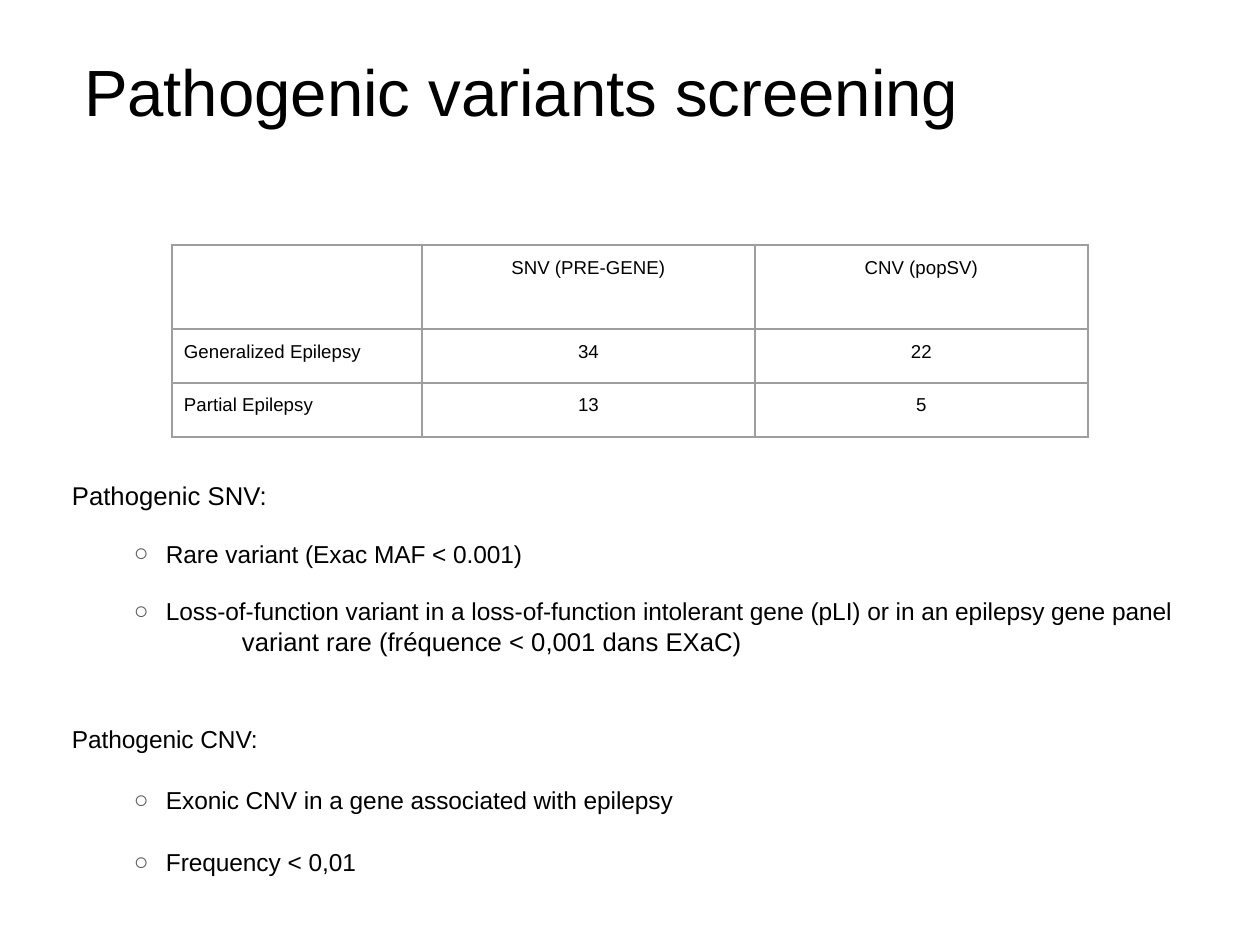
from dataclasses import dataclass
from lxml.etree import SubElement
from pptx import Presentation
from pptx.dml.color import RGBColor
from pptx.enum.text import MSO_ANCHOR, MSO_AUTO_SIZE, PP_ALIGN
from pptx.oxml.ns import qn
from pptx.util import Emu, Pt


@dataclass(frozen=True)
class Theme:
    """Colours, font and type sizes of the slide."""
    face: str = "Arial"
    ink: str = "000000"
    rule: str = "9E9E9E"
    mark: str = "595959"
    title: float = 28
    head: float = 11
    item: float = 10.5
    cell: float = 8


THEME = Theme()
PAD = 12
HEADS = ["", "SNV (PRE-GENE)", "CNV (popSV)"]
ROWS = [["Generalized Epilepsy", "34", "22"], ["Partial Epilepsy", "13", "5"]]
HEAD = dict(size=THEME.head)
ITEM = dict(size=THEME.item, left=94, hang=32, gap=12, mark="○")
WIDE = dict(ITEM, lead=1.15)
LINES = [
    ("Pathogenic SNV:", HEAD),
    ("Rare variant (Exac MAF < 0.001)", ITEM),
    ("Loss-of-function variant in a loss-of-function intolerant gene (pLI) "
     "or in an epilepsy gene panel", ITEM),
    ("variant rare (fréquence < 0,001 dans EXaC)", dict(HEAD, left=170)),
    ("Pathogenic CNV:", dict(size=THEME.item, gap=27, lead=1.15)),
    ("Exonic CNV in a gene associated with epilepsy", WIDE),
    ("Frequency < 0,01", WIDE),
]


def px(count):
    """Turn px into EMU."""
    return Emu(round(count * 914400 / 168))


def put(item, **values):
    """Set attributes from format values."""
    for name, value in values.items():
        setattr(item, name, value)


def write(para, text, size):
    """Add one styled run of text."""
    run = para.add_run()
    put(run, text=text)
    put(run.font, name=THEME.face, size=Pt(size))
    run.font.color.rgb = RGBColor.from_string(THEME.ink)


def frame(shape, box, top=PAD):
    """Place a placeholder in its box and return its text frame."""
    left, high, wide, tall = map(px, box)
    put(shape, left=left, top=high, width=wide, height=tall)
    text = shape.text_frame
    put(text, word_wrap=True, auto_size=MSO_AUTO_SIZE.NONE,
        vertical_anchor=MSO_ANCHOR.TOP, margin_left=px(PAD),
        margin_right=px(PAD), margin_top=px(top), margin_bottom=px(PAD))
    return text


def title(shape, box):
    """Write the slide title."""
    para = frame(shape, box, 19).paragraphs[0]
    put(para, alignment=PP_ALIGN.LEFT)
    write(para, "Pathogenic variants screening", THEME.title)


def line(para, text, size, left=0, hang=0, gap=0, lead=1.0, mark=None):
    """Write one line of the list."""
    put(para, level=1 if mark else 0, alignment=PP_ALIGN.LEFT,
        space_before=Pt(gap), line_spacing=lead)
    props = para._p.get_or_add_pPr()
    props.set("marL", str(px(left)))
    props.set("indent", str(-px(hang)))
    if mark:
        tint = SubElement(props, qn("a:buClr"))
        SubElement(tint, qn("a:srgbClr"), val=THEME.mark)
        SubElement(props, qn("a:buFont"), typeface=THEME.face)
        SubElement(props, qn("a:buChar"), char=mark)
    else:
        SubElement(props, qn("a:buNone"))
    write(para, text, size)


def body(shape, box):
    """Write the criteria list."""
    text = frame(shape, box, 15)
    for row, (words, style) in enumerate(LINES):
        para = text.add_paragraph() if row else text.paragraphs[0]
        line(para, words, **style)


def border(cell):
    """Rule all four sides of a cell."""
    props = cell._tc.get_or_add_tcPr()
    for side in "LRTB":
        edge = SubElement(props, qn(f"a:ln{side}"), w=str(Pt(0.75)))
        fill = SubElement(edge, qn("a:solidFill"))
        SubElement(fill, qn("a:srgbClr"), val=THEME.rule)


def table(slide, box):
    """Draw the table of variant counts."""
    wide, tall = box[2:]
    grid = slide.shapes.add_table(3, 3, *map(px, box)).table
    put(grid, first_row=False, horz_banding=False)
    first, high = 250, 84
    for col, span in zip(grid.columns, [first] + [(wide - first) / 2] * 2):
        put(col, width=px(span))
    for row, span in zip(grid.rows, [high] + [(tall - high) / 2] * 2):
        put(row, height=px(span))
    for row, words in enumerate([HEADS] + ROWS):
        for col, word in enumerate(words):
            cell = grid.cell(row, col)
            border(cell)
            cell.fill.background()
            put(cell, margin_left=px(PAD), margin_right=px(PAD),
                margin_top=px(PAD), margin_bottom=px(PAD))
            if word:
                para = cell.text_frame.paragraphs[0]
                put(para, alignment=PP_ALIGN.CENTER if col else PP_ALIGN.LEFT)
                write(para, word, THEME.cell)


def main():
    """Build and save the slide."""
    deck = Presentation()
    put(deck, slide_width=px(1260), slide_height=px(945))
    slide = deck.slides.add_slide(deck.slide_layouts[1])
    title(slide.shapes.title, (72, 32, 1174, 79))
    body(slide.placeholders[1], (60, 465, 1174, 335))
    table(slide, (172, 245, 916, 192))
    deck.save("out.pptx")


if __name__ == "__main__":
    main()
